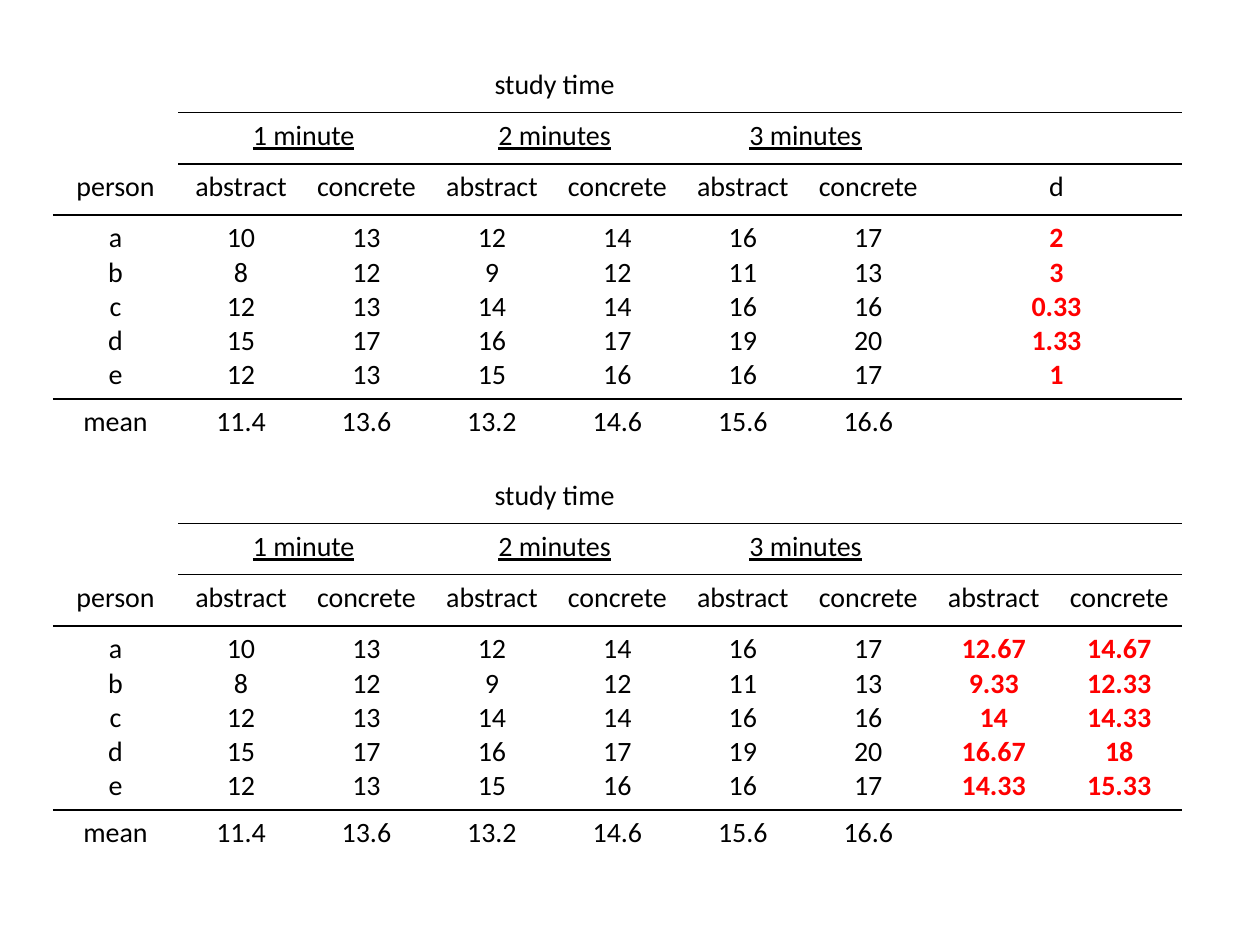
from dataclasses import dataclass

import pptx
import pptx.dml.color
import pptx.enum.text
import pptx.oxml
import pptx.oxml.ns
import pptx.util

Pt = pptx.util.Pt


@dataclass(frozen=True)
class Theme:
    font: str = "Calibri"
    size: float = 16
    ink: str = "000000"
    result: str = "FF0000"
    rule: float = 1


@dataclass(frozen=True)
class ResultColumn:
    heading: str
    values: tuple[str, ...]


@dataclass(frozen=True)
class StudyTable:
    top: float
    results: tuple[ResultColumn, ...]


THEME = Theme()
LEFT, COL_WIDTH = 30.2, 71.7
ROW_HEIGHTS = (29.2, 29.2, 29.2, 105.2, 29.2)
RULES_BELOW = {0: 1, 2: 0, 3: 0}  # row above the rule: first ruled column
NO_STYLE_NO_GRID = "{2D5ABB26-0587-4C30-8999-92F81FD0307C}"

TIMES = ("1 minute", "2 minutes", "3 minutes")
CONDITIONS = ("abstract", "concrete")
PERSONS = ("a", "b", "c", "d", "e")
SCORES = (
    (10, 8, 12, 15, 12),
    (13, 12, 13, 17, 13),
    (12, 9, 14, 16, 15),
    (14, 12, 14, 17, 16),
    (16, 11, 16, 19, 16),
    (17, 13, 16, 20, 17),
)
RESULT_COL = 1 + len(SCORES)
COLS = RESULT_COL + len(CONDITIONS)

TABLES = (
    StudyTable(270, (
        ResultColumn("abstract", ("12.67", "9.33", "14", "16.67", "14.33")),
        ResultColumn("concrete", ("14.67", "12.33", "14.33", "18", "15.33")),
    )),
    StudyTable(35.2, (ResultColumn("d", ("2", "3", "0.33", "1.33", "1")),)),
)


def write(cell, *lines: str, color: str = THEME.ink, bold: bool = False,
          underline: bool = False) -> None:
    """Put each line in a centred paragraph of its own."""
    tf = cell.text_frame
    for i, line in enumerate(lines):
        p = tf.add_paragraph() if i else tf.paragraphs[0]
        p.alignment = pptx.enum.text.PP_ALIGN.CENTER
        r = p.add_run()
        r.text = line
        r.font.name = THEME.font
        r.font.size = Pt(THEME.size)
        r.font.bold = bold
        r.font.underline = underline
        r.font.color.rgb = pptx.dml.color.RGBColor.from_string(color)


def add_border(cell, side: str) -> None:
    """Rule one side of a cell; side is T or B."""
    cell._tc.get_or_add_tcPr().append(pptx.oxml.parse_xml(
        f'<a:ln{side} {pptx.oxml.ns.nsdecls("a")} w="{Pt(THEME.rule)}">'
        f'<a:solidFill><a:srgbClr val="{THEME.ink}"/></a:solidFill>'
        f'</a:ln{side}>'))


def format_cells(table) -> None:
    for row in range(len(ROW_HEIGHTS)):
        for col in range(COLS):
            cell = table.cell(row, col)
            for side, above in (("T", row - 1), ("B", row)):
                if col >= RULES_BELOW.get(above, COLS):
                    add_border(cell, side)
            cell.fill.background()


def merge(table, row: int, col: int, span: int):
    cell = table.cell(row, col)
    if span > 1:
        cell.merge(table.cell(row, col + span - 1))
    return cell


def add_study_table(s, study: StudyTable) -> None:
    table = s.shapes.add_table(
        len(ROW_HEIGHTS), COLS, Pt(LEFT), Pt(study.top),
        Pt(COLS * COL_WIDTH), Pt(sum(ROW_HEIGHTS))).table
    table.first_row = table.horz_banding = False
    style = table._tbl.tblPr.find(pptx.oxml.ns.qn("a:tableStyleId"))
    style.text = NO_STYLE_NO_GRID
    for column in table.columns:
        column.width = Pt(COL_WIDTH)
    for row, height in zip(table.rows, ROW_HEIGHTS):
        row.height = Pt(height)
    format_cells(table)

    write(merge(table, 0, 1, len(SCORES)), "study time")
    for i, time in enumerate(TIMES):
        write(merge(table, 1, 1 + 2 * i, 2), time, underline=True)

    write(table.cell(2, 0), "person")
    write(table.cell(3, 0), *PERSONS)
    write(table.cell(4, 0), "mean")
    for i, scores in enumerate(SCORES):
        col = 1 + i
        write(table.cell(2, col), CONDITIONS[i % 2])
        write(table.cell(3, col), *map(str, scores))
        write(table.cell(4, col), f"{sum(scores) / len(scores):.1f}")

    span = (COLS - RESULT_COL) // len(study.results)
    for i, result in enumerate(study.results):
        col = RESULT_COL + i * span
        write(merge(table, 2, col, span), result.heading)
        write(merge(table, 3, col, span), *result.values,
              color=THEME.result, bold=True)


def main() -> None:
    prs = pptx.Presentation()
    prs.slide_width, prs.slide_height = Pt(720), Pt(540)
    s = prs.slides.add_slide(prs.slide_layouts[6])
    for study in TABLES:
        add_study_table(s, study)
    prs.save("out.pptx")


if __name__ == "__main__":
    main()
